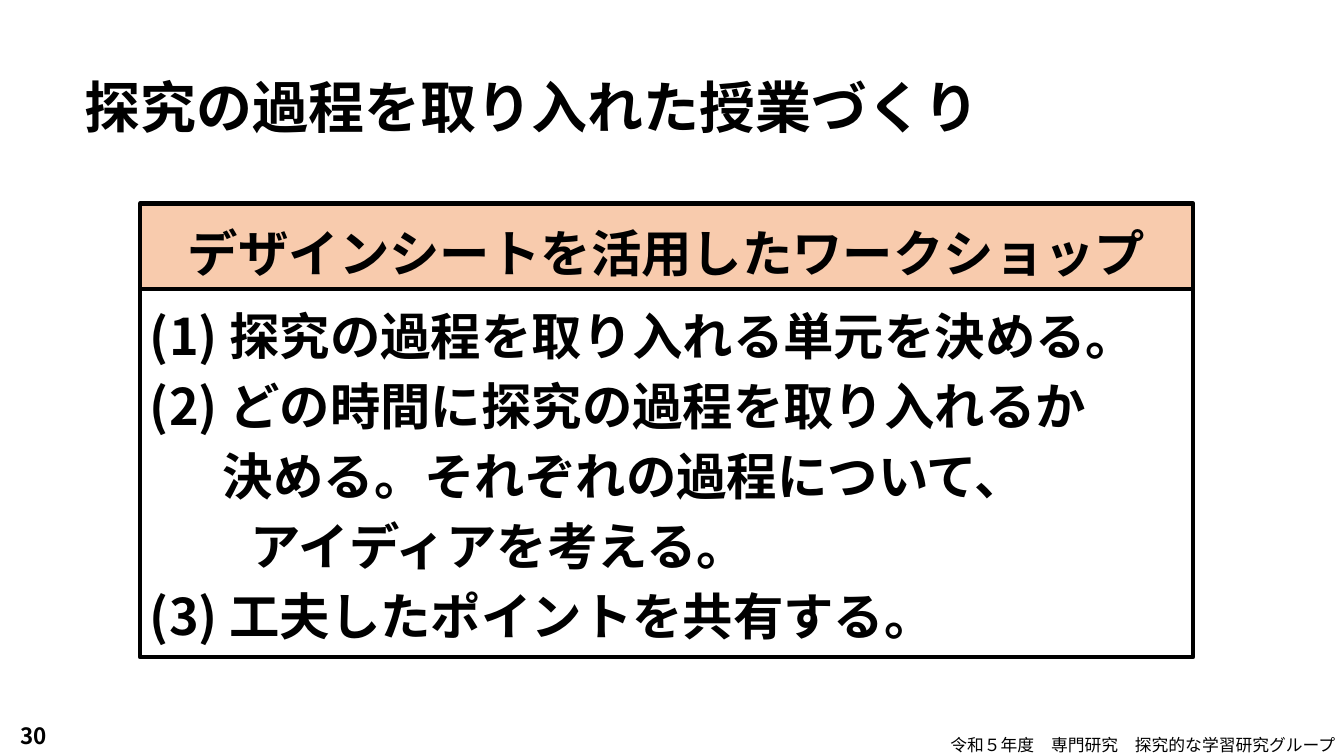
from lxml import etree
from pptx import Presentation
from pptx.dml.color import RGBColor
from pptx.enum.shapes import MSO_SHAPE
from pptx.enum.text import MSO_ANCHOR, PP_ALIGN
from pptx.oxml.ns import qn
from pptx.util import Cm, Pt

RECTANGLE = MSO_SHAPE.RECTANGLE
TOP, MIDDLE = MSO_ANCHOR.TOP, MSO_ANCHOR.MIDDLE
LEFT, CENTER, RIGHT = PP_ALIGN.LEFT, PP_ALIGN.CENTER, PP_ALIGN.RIGHT
BLACK = RGBColor(0x00, 0x00, 0x00)
WHITE = RGBColor(0xFF, 0xFF, 0xFF)
PEACH = RGBColor(0xF8, 0xCB, 0xAD)
FONT = "Noto Sans CJK JP"

TITLE = "探究の過程を取り入れた授業づくり"
HEADING = "デザインシートを活用したワークショップ"
STEPS = [  # text, left indent in cm
    ("(1) 探究の過程を取り入れる単元を決める。", 0),
    ("(2) どの時間に探究の過程を取り入れるか", 0),
    ("決める。それぞれの過程について、", 1.84),
    ("アイディアを考える。", 2.54),
    ("(3) 工夫したポイントを共有する。", 0),
]
FOOTER = "令和５年度　専門研究　探究的な学習研究グループ"
PAGE_NUMBER = "30"

PANEL_LEFT, PANEL_TOP, PANEL_WIDTH = 3.53, 5.13, 26.54
HEADING_HEIGHT, STEPS_HEIGHT = 2.16, 9.27


def write(shape, lines, size, bold=True, align=LEFT, anchor=TOP, top_inset=0.13, **spacing):
    """Fill a shape with (text, indent) lines in one format."""
    frame = shape.text_frame
    frame_format = {"word_wrap": True, "vertical_anchor": anchor, "margin_top": Cm(top_inset)}
    for name, value in frame_format.items():
        setattr(frame, name, value)
    for index, (text, indent) in enumerate(lines):
        paragraph = frame.add_paragraph() if index else frame.paragraphs[0]
        for name, value in {"alignment": align, **spacing}.items():
            setattr(paragraph, name, value)
        if indent:
            paragraph._p.get_or_add_pPr().set("marL", str(Cm(indent)))
        run = paragraph.add_run()
        run.text = text
        for name, value in {"name": FONT, "size": Pt(size), "bold": bold}.items():
            setattr(run.font, name, value)
        run.font.color.rgb = BLACK
        east_asian = etree.SubElement(run._r.get_or_add_rPr(), qn("a:ea"))
        east_asian.set("typeface", FONT)


def add_panel(slide, top, height, fill):
    shape = slide.shapes.add_shape(
        RECTANGLE, Cm(PANEL_LEFT), Cm(top), Cm(PANEL_WIDTH), Cm(height))
    shape.shadow.inherit = False
    shape.fill.solid()
    shape.fill.fore_color.rgb = fill
    shape.line.color.rgb = BLACK
    shape.line.width = Pt(3)
    return shape


def add_label(slide, box, text, size, **text_format):
    shape = slide.shapes.add_textbox(*map(Cm, box))
    write(shape, [(text, 0)], size, **text_format)


def main():
    presentation = Presentation()
    presentation.slide_width, presentation.slide_height = Cm(33.87), Cm(19.05)
    slide = presentation.slides.add_slide(presentation.slide_layouts[6])

    steps = add_panel(slide, PANEL_TOP + HEADING_HEIGHT, STEPS_HEIGHT, WHITE)
    write(steps, STEPS, 36, top_inset=0.51, line_spacing=Pt(40), space_before=Pt(10))
    add_label(slide, (1.88, 1.7, 23.88, 2.01), TITLE, 40)
    heading = add_panel(slide, PANEL_TOP, HEADING_HEIGHT, PEACH)
    write(heading, [(HEADING, 0)], 36, align=CENTER, anchor=MIDDLE, top_inset=0.41)
    add_label(slide, (23.09, 18.26, 11.43, 1.02), FOOTER, 12,
              bold=False, align=CENTER, anchor=MIDDLE)
    add_label(slide, (-0.13, 18.03, 1.55, 1.02), PAGE_NUMBER, 16,
              align=RIGHT, anchor=MIDDLE)
    presentation.save("out.pptx")


if __name__ == "__main__":
    main()
